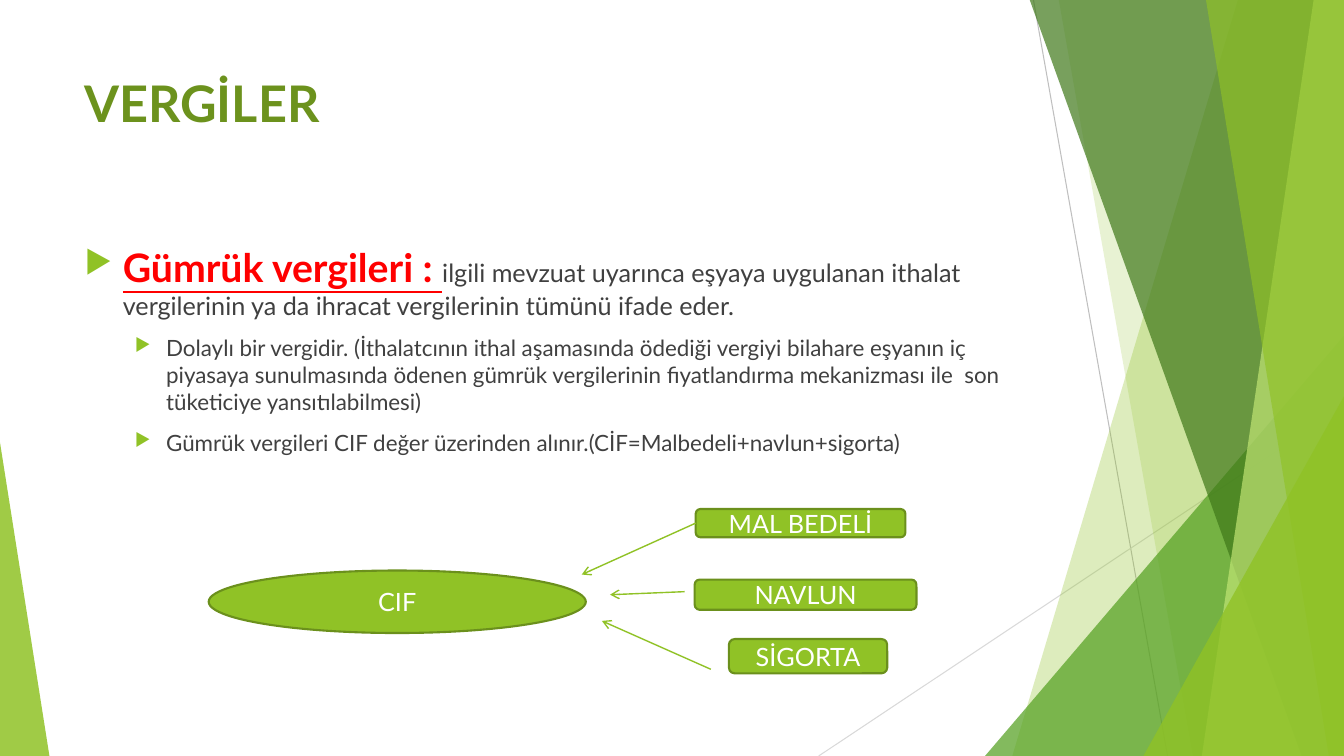
from pptx import Presentation
from pptx.dml.color import RGBColor
from pptx.enum.shapes import MSO_CONNECTOR, MSO_SHAPE
from pptx.enum.text import MSO_ANCHOR, PP_ALIGN
from pptx.oxml.ns import qn
from pptx.util import Inches, Pt
from lxml import etree

STRAIGHT = MSO_CONNECTOR.STRAIGHT
TRIANGLE, OVAL = MSO_SHAPE.ISOSCELES_TRIANGLE, MSO_SHAPE.OVAL
ROUNDED = MSO_SHAPE.ROUNDED_RECTANGLE
MIDDLE, CENTER = MSO_ANCHOR.MIDDLE, PP_ALIGN.CENTER

GREEN = RGBColor(0x90, 0xC2, 0x26)
LEAF = RGBColor(0x54, 0xA0, 0x21)
FOREST = RGBColor(0x3F, 0x78, 0x19)
LIME = RGBColor(0xC0, 0xE4, 0x74)
OUTLINE = RGBColor(0x6B, 0x90, 0x1C)
TITLE_GREEN = RGBColor(0x6C, 0x92, 0x1D)
RED = RGBColor(0xFF, 0, 0)
DARK = RGBColor(0x40, 0x40, 0x40)
WHITE = RGBColor(0xFF, 0xFF, 0xFF)
GREY = RGBColor(0xBF, 0xBF, 0xBF)
LIGHT_GREY = RGBColor(0xD9, 0xD9, 0xD9)

FONT = "Lato"
WIDTH, HEIGHT, TOP = 13.33, 7.5, -0.01

TITLE = dict(size=Pt(36), bold=True, color=TITLE_GREEN)
TERM = dict(size=Pt(28), bold=True, underline=True, color=RED)
BODY = dict(size=Pt(18), color=DARK)
DETAIL = dict(size=Pt(16), color=DARK)
LABEL = dict(size=Pt(18), color=WHITE)

PARAGRAPHS = [
    (0, 0.38, 0.38, [
        ("Gümrük vergileri : ", TERM),
        ("ilgili mevzuat uyarınca eşyaya uygulanan ithalat vergilerinin "
         "ya da ihracat vergilerinin tümünü ifade eder.", BODY)]),
    (1, 0.81, 0.31, [
        ("Dolaylı bir vergidir. (İthalatcının ithal aşamasında ödediği vergiyi "
         "bilahare eşyanın iç piyasaya sunulmasında ödenen gümrük vergilerinin "
         "fiyatlandırma mekanizması ile  son tüketiciye yansıtılabilmesi)", DETAIL)]),
    (1, 0.81, 0.31, [
        ("Gümrük vergileri CIF değer üzerinden alınır."
         "(CİF=Malbedeli+navlun+sigorta)", DETAIL)]),
]
NODES = [
    (ROUNDED, "MAL BEDELİ", (6.9, 5.05, 2.08, 0.28)),
    (ROUNDED, "NAVLUN", (6.89, 5.75, 2.2, 0.3)),
    (ROUNDED, "SİGORTA", (7.23, 6.34, 1.57, 0.34)),
    (OVAL, "CIF", (2.07, 5.66, 3.74, 0.62)),
]
ARROWS = [
    (6.9, 5.19, 5.77, 5.7),
    (6.79, 5.87, 6.05, 5.9),
    (7.05, 6.64, 5.97, 6.16),
]


def add_run(p, text, style):
    r = p.add_run()
    r.text = text
    r.font.name = FONT
    for name, value in style.items():
        if name == "color":
            r.font.color.rgb = value
        else:
            setattr(r.font, name, value)


def add_textbox(s, box):
    tf = s.shapes.add_textbox(*map(Inches, box)).text_frame
    tf.word_wrap = True
    return tf


def set_bullet(p, left, hanging):
    pPr = p._p.get_or_add_pPr()
    pPr.set("marL", str(Inches(left)))
    pPr.set("indent", str(-Inches(hanging)))
    color = etree.SubElement(pPr, qn("a:buClr"))
    etree.SubElement(color, qn("a:srgbClr"), val=str(GREEN))
    etree.SubElement(pPr, qn("a:buSzPct"), val="80000")
    etree.SubElement(pPr, qn("a:buChar"), char="▶")


def add_body(s, box):
    tf = add_textbox(s, box)
    for i, (level, left, hanging, runs) in enumerate(PARAGRAPHS):
        p = tf.add_paragraph() if i else tf.paragraphs[0]
        p.level = level
        p.space_before = Pt(10)
        set_bullet(p, left, hanging)
        for text, style in runs:
            add_run(p, text, style)


def add_line(s, ends, color, width, arrow=False):
    sp = s.shapes.add_connector(STRAIGHT, *map(Inches, ends))
    sp.line.color.rgb = color
    sp.line.width = Pt(width)
    if arrow:
        etree.SubElement(sp.line._get_or_add_ln(), qn("a:tailEnd"), type="arrow")
    etree.SubElement(sp._element.spPr, qn("a:effectLst"))


def fill_facet(sp, color, opacity):
    sp.shadow.inherit = False
    sp.line.fill.background()
    sp.fill.solid()
    sp.fill.fore_color.rgb = color
    clr = sp._element.spPr.find(qn("a:solidFill"))[0]
    etree.SubElement(clr, qn("a:alpha"), val=str(opacity * 1000))


def add_band(s, top_x, bottom_x, color, opacity):
    corners = [(WIDTH, TOP), (WIDTH, HEIGHT), (bottom_x, HEIGHT)]
    fb = s.shapes.build_freeform(Inches(top_x), Inches(TOP))
    fb.add_line_segments([(Inches(x), Inches(y)) for x, y in corners], close=True)
    fill_facet(fb.convert_to_shape(), color, opacity)


def add_triangle(s, left, width, height, apex, color, opacity):
    box = (left, HEIGHT - height, width, height)
    sp = s.shapes.add_shape(TRIANGLE, *map(Inches, box))
    sp.adjustments[0] = apex
    fill_facet(sp, color, opacity)


def add_node(s, shape, text, box):
    sp = s.shapes.add_shape(shape, *map(Inches, box))
    sp.shadow.inherit = False
    sp.fill.solid()
    sp.fill.fore_color.rgb = GREEN
    sp.line.color.rgb = OUTLINE
    sp.line.width = Pt(1.5)
    tf = sp.text_frame
    tf.word_wrap = True
    tf.vertical_anchor = MIDDLE
    p = tf.paragraphs[0]
    p.alignment = CENTER
    add_run(p, text, LABEL)


def add_backdrop(s):
    add_line(s, (10.25, 0, 11.58, HEIGHT), GREY, 0.75)
    add_line(s, (WIDTH, 4.03, 8.12, HEIGHT), LIGHT_GREY, 0.75)
    add_band(s, 12.28, 10.04, GREEN, 30)
    add_band(s, 10.5, 11.83, GREEN, 20)
    add_triangle(s, 9.77, 3.56, 4.17, 1, LEAF, 72)
    add_band(s, 10.21, 12.91, FOREST, 70)
    add_band(s, 13.03, 11.92, LIME, 70)
    add_band(s, 11.96, 13.18, GREEN, 65)
    add_triangle(s, 11.34, 1.99, 3.57, 1, GREEN, 80)
    add_triangle(s, 0, 0.49, 3.11, 0, GREEN, 85)


def main():
    prs = Presentation()
    prs.slide_width, prs.slide_height = Inches(WIDTH), Inches(HEIGHT)
    s = prs.slides.add_slide(prs.slide_layouts[6])
    add_backdrop(s)
    title = add_textbox(s, (0.74, 0.67, 9.4, 1.44))
    add_run(title.paragraphs[0], "VERGİLER", TITLE)
    add_body(s, (0.74, 2.36, 9.4, 4.24))
    for shape, text, box in NODES:
        add_node(s, shape, text, box)
    for ends in ARROWS:
        add_line(s, ends, GREEN, 1, arrow=True)
    prs.save("out.pptx")


if __name__ == "__main__":
    main()
